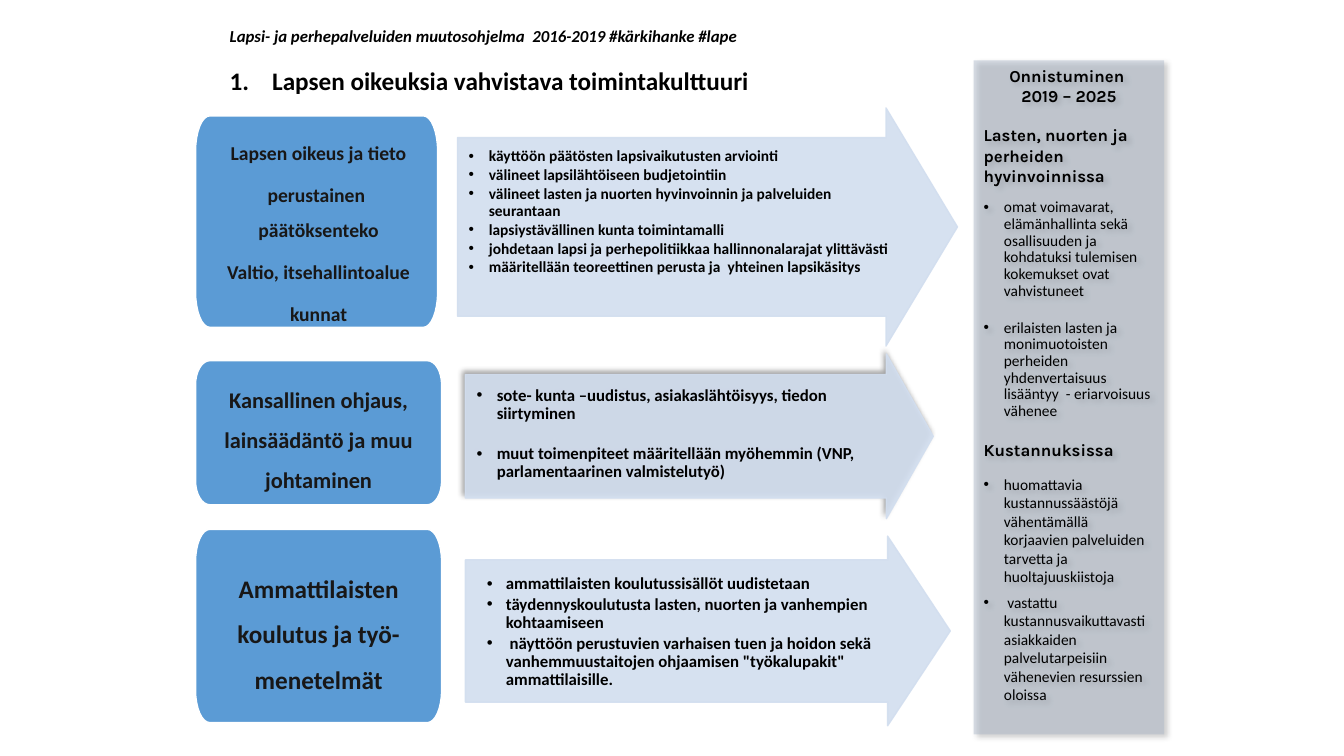
from math import cos, pi, sin

from lxml.etree import SubElement
from pptx import Presentation
from pptx.dml.color import RGBColor
from pptx.enum.shapes import MSO_SHAPE
from pptx.enum.text import MSO_ANCHOR, PP_ALIGN
from pptx.oxml.ns import qn
from pptx.util import Cm, Pt

BLUE, PALE_BLUE, GREY = "5B9BD5", "D2DEEF", "ADB9CA"
BLACK, DARK, WHITE = "000000", "181717", "FFFFFF"
BULLET = {"marL": Cm(0.76), "indent": Cm(-0.51), "line_spacing": 0.9}
WIDE_BULLET = BULLET | {"marL": Cm(0.99), "indent": Cm(-0.48)}
SIDE_BULLET = BULLET | {"marL": Cm(0.51), "name": "Calibri", "size": Pt(11), "bold": False,
                        "space_after": Pt(1.65)}
COST_BULLET = SIDE_BULLET | {"line_spacing": 1.0}
HEADING = {"name": "Karla", "size": Pt(12), "bold": True}
CENTRED_HEADING = HEADING | {"alignment": PP_ALIGN.CENTER}


def paint(fill, color, opacity=100):
    fill.solid()
    fill.fore_color.rgb = RGBColor.from_string(color)
    if opacity < 100:
        srgb = fill._xPr.find(".//" + qn("a:srgbClr"))
        SubElement(srgb, qn("a:alpha"), val=str(opacity * 1000))


def write(shape, lines, color=BLACK):
    """Fill a shape with (text, format) paragraphs; an indented one gets a bullet."""
    frame = shape.text_frame
    frame.word_wrap = True
    for number, (text, formats) in enumerate(lines):
        para = frame.add_paragraph() if number else frame.paragraphs[0]
        span = para.add_run()
        span.text = text
        paint(span.font.fill, color)
        para.alignment = PP_ALIGN.LEFT
        properties = para._p.get_or_add_pPr()
        for name, value in formats.items():
            if name in ("marL", "indent"):
                properties.set(name, str(value))
            elif name in ("name", "size", "bold", "italic"):
                setattr(span.font, name, value)
            else:
                setattr(para, name, value)
        if "indent" in formats and "\t" not in text:
            SubElement(properties, qn("a:buFont"), typeface="Arial")
            SubElement(properties, qn("a:buChar"), char="•")


deck = Presentation()
deck.slide_width, deck.slide_height = Cm(33.87), Cm(19.05)
page = deck.slides.add_slide(deck.slide_layouts[6])

# Arrows: left, top, width, height, head length, top inset, right inset, size, bullet, lines
arrows = [
    (11.53, 2.72, 12.6, 6, 1.8, 1.02, 1.73, 11, BULLET, [
        ("käyttöön päätösten lapsivaikutusten arviointi", 0),
        ("välineet lapsilähtöiseen budjetointiin", 0),
        ("välineet lasten ja nuorten hyvinvoinnin ja palveluiden seurantaan", 0),
        ("lapsiystävällinen kunta toimintamalli", 0),
        ("johdetaan lapsi ja perhepolitiikkaa hallinnonalarajat ylittävästi", 0),
        ("määritellään teoreettinen perusta ja  yhteinen lapsikäsitys", 0)]),
    (11.73, 8.92, 11.79, 4.15, 1.18, 0.83, 1.07, 12, BULLET, [
        ("sote- kunta –uudistus, asiakaslähtöisyys, tiedon siirtyminen", 0),
        ("muut toimenpiteet määritellään myöhemmin (VNP, parlamentaarinen valmistelutyö)", 14)]),
    (11.73, 13.51, 12.22, 4.78, 1.58, 0.99, 1.42, 12, WIDE_BULLET, [
        ("ammattilaisten koulutussisällöt uudistetaan", 0),
        ("täydennyskoulutusta lasten, nuorten ja vanhempien kohtaamiseen", 0),
        (" näyttöön perustuvien varhaisen tuen ja hoidon sekä vanhemmuustaitojen "
         "ohjaamisen \"työkalupakit\" ammattilaisille.", 0)]),
]
# Topic boxes: top, width, height, text size, text
topics = [
    (2.92, 6.1, 5.33, 14, ""),
    (9.09, 6.2, 3.63, 16, "Kansallinen ohjaus, lainsäädäntö ja muu johtaminen"),
    (13.34, 6.2, 4.87, 18, "Ammattilaisten koulutus ja työ- menetelmät"),
]
TOPIC_LEFT, CORNER_WIDTH = 4.93, 0.36
shadow_angles = []

for (left, top, width, height, head, inset_top, inset_right, size, bullet, lines) in arrows:
    right, bottom, notch = left + width, top + height, height / 8
    neck = right - head
    outline = [(left, top + notch), (neck, top + notch), (neck, top),
               (right, top + height / 2), (neck, bottom), (neck, bottom - notch),
               (left, bottom - notch)]
    points = [(Cm(x), Cm(y)) for x, y in outline]
    builder = page.shapes.build_freeform(*points[0], scale=1.0)
    builder.add_line_segments(points[1:])
    arrow = builder.convert_to_shape()
    paint(arrow.fill, PALE_BLUE, 90)
    paint(arrow.line.fill, PALE_BLUE, 90)
    arrow.line.width = Pt(1)
    shadow_angles.append((arrow, 225 if lines is arrows[1][-1] else None))
    insets = {"margin_left": Cm(0.03), "margin_top": Cm(inset_top),
              "margin_right": Cm(inset_right), "margin_bottom": 0,
              "vertical_anchor": MSO_ANCHOR.TOP}
    for name, value in insets.items():
        setattr(arrow.text_frame, name, value)
    style = bullet | {"name": "Calibri", "size": Pt(size), "bold": True,
                      "space_after": Pt(size * 0.15)}
    write(arrow, [(text, style | {"space_before": Pt(gap)}) for text, gap in lines])

for top, width, height, size, text in topics:
    corner_height = height / 6
    centres = [(TOPIC_LEFT + width - CORNER_WIDTH, top + height - corner_height),
               (TOPIC_LEFT + CORNER_WIDTH, top + height - corner_height),
               (TOPIC_LEFT + CORNER_WIDTH, top + corner_height),
               (TOPIC_LEFT + width - CORNER_WIDTH, top + corner_height)]
    points = [(Cm(x + CORNER_WIDTH * cos((quarter + step / 8) * pi / 2)),
               Cm(y + corner_height * sin((quarter + step / 8) * pi / 2)))
              for quarter, (x, y) in enumerate(centres) for step in range(9)]
    builder = page.shapes.build_freeform(*points[0], scale=1.0)
    builder.add_line_segments(points[1:])
    box = builder.convert_to_shape()
    paint(box.fill, BLUE)
    paint(box.line.fill, WHITE)
    box.line.width = Pt(1)
    shadow_angles.append((box, None))
    style = {"name": "Calibri", "size": Pt(size), "bold": True, "line_spacing": 1.5,
             "space_after": Pt(size * 0.35), "alignment": PP_ALIGN.CENTER}
    if text:
        box.text_frame.vertical_anchor = MSO_ANCHOR.MIDDLE
        write(box, [(text, style)], DARK)
    else:
        label = page.shapes.add_textbox(Cm(4.93), Cm(3.12), Cm(6.2), Cm(5.38))
        write(label, [(line, style) for line in (
            "Lapsen oikeus ja tieto", "perustainen  päätöksenteko",
            "Valtio, itsehallintoalue", "kunnat")], DARK)

title = page.shapes.add_textbox(Cm(5.54), Cm(1.52), Cm(19.4), Cm(1.02))
write(title, [("1.\tLapsen oikeuksia vahvistava toimintakulttuuri",
               {"name": "Calibri", "size": Pt(18), "bold": True,
                "marL": Cm(1.07), "indent": Cm(-1.07)})])
programme = page.shapes.add_textbox(Cm(5.54), Cm(0.53), Cm(13.9), Cm(0.76))
write(programme, [("Lapsi- ja perhepalveluiden muutosohjelma  2016-2019 #kärkihanke #lape",
                   {"name": "Calibri", "size": Pt(12), "bold": True, "italic": True})])

results = page.shapes.add_shape(MSO_SHAPE.RECTANGLE, Cm(24.54), Cm(1.52), Cm(4.8), Cm(16.99))
paint(results.fill, GREY, 47)
results.line.fill.background()
results.text_frame.vertical_anchor = MSO_ANCHOR.TOP
shadow_angles.append((results, 45))
write(results, [
    ("Onnistuminen ", CENTRED_HEADING),
    ("2019 – 2025", CENTRED_HEADING),
    ("Lasten, nuorten ja perheiden hyvinvoinnissa", HEADING | {"space_before": Pt(14)}),
    ("omat voimavarat, elämänhallinta sekä osallisuuden ja kohdatuksi tulemisen "
     "kokemukset ovat vahvistuneet", SIDE_BULLET | {"space_before": Pt(10)}),
    ("erilaisten lasten ja monimuotoisten perheiden yhdenvertaisuus lisääntyy  - "
     "eriarvoisuus vähenee", SIDE_BULLET | {"space_before": Pt(13)}),
    ("Kustannuksissa", HEADING | {"space_before": Pt(12.5)}),
    ("huomattavia kustannussäästöjä vähentämällä korjaavien palveluiden tarvetta ja "
     "huoltajuuskiistoja", COST_BULLET | {"space_before": Pt(11), "space_after": Pt(0)}),
    (" vastattu kustannusvaikuttavasti asiakkaiden palvelutarpeisiin vähenevien "
     "resurssien oloissa", COST_BULLET | {"space_before": Pt(5)}),
])

for shape, angle in shadow_angles:
    shape.shadow.inherit = False
    if angle:
        effects = shape._element.spPr.find(qn("a:effectLst"))
        shadow = SubElement(effects, qn("a:outerShdw"), blurRad=str(Pt(4)),
                            dist=str(Pt(3)), dir=str(angle * 60000))
        tint = SubElement(shadow, qn("a:srgbClr"), val=BLACK)
        SubElement(tint, qn("a:alpha"), val="40000")

deck.save("out.pptx")
